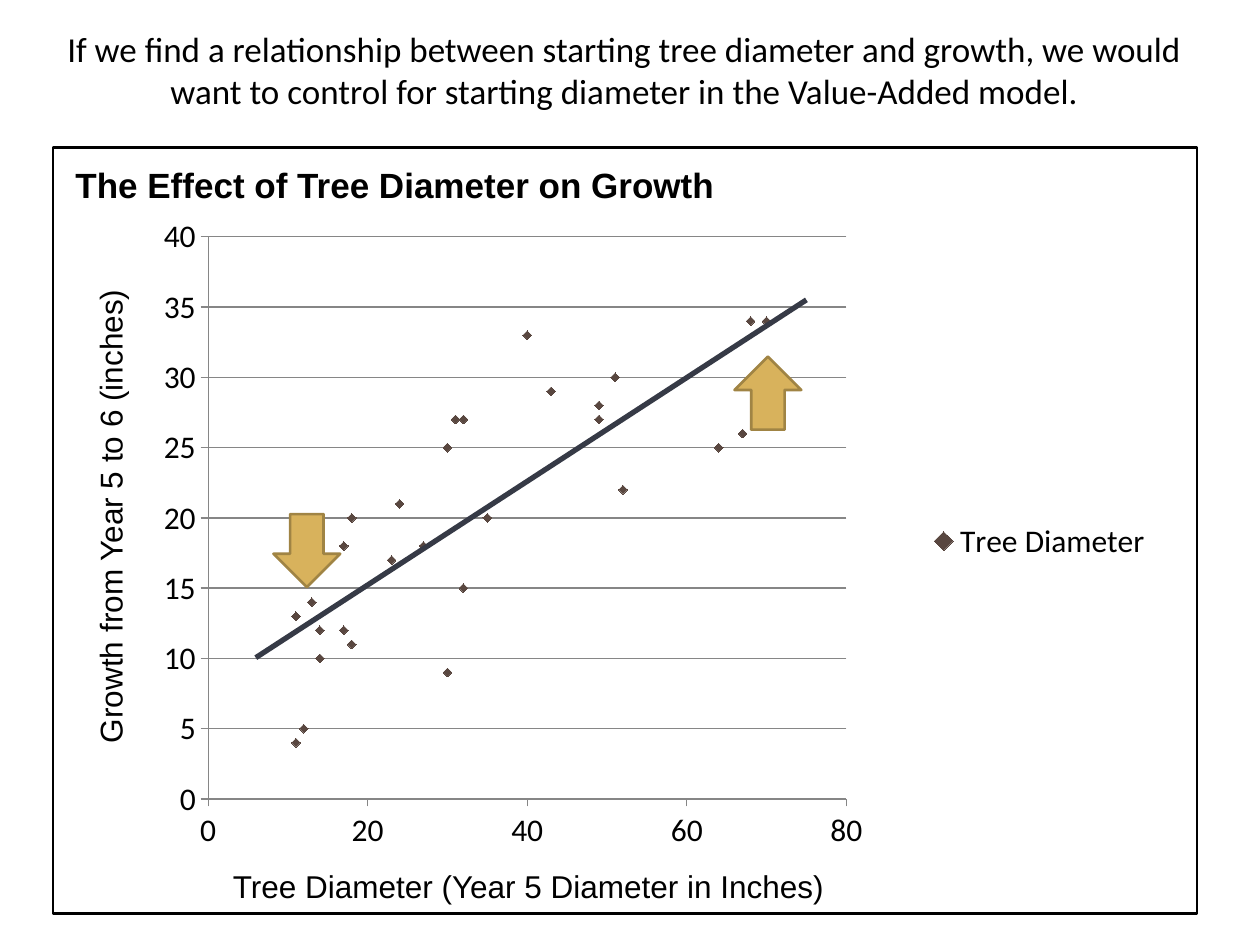
from lxml.etree import SubElement as Sub
from pptx import Presentation
from pptx.chart.data import XyChartData
from pptx.dml.color import RGBColor
from pptx.enum.chart import XL_CHART_TYPE as Kind, XL_LEGEND_POSITION as Side
from pptx.enum.chart import XL_MARKER_STYLE as Mark, XL_TICK_MARK as Tick
from pptx.enum.shapes import MSO_CONNECTOR as Link, MSO_SHAPE as Form
from pptx.enum.text import MSO_AUTO_SIZE as Fit, PP_ALIGN as Align
from pptx.oxml.ns import qn
from pptx.util import Inches, Pt

HUES = {"ink": "000000", "grid": "868686", "dot": "594740",
        "gold": "D8B25C", "edge": "A08444", "trend": "363A46"}

TEXTS = [
    ("If we find a relationship between starting tree diameter and growth, "
     "we would want to control for starting diameter in the Value-Added model.",
     (0.33, 0.17, 9.25, 0.77), 0, 20, "Calibri", False, Align.CENTER, True),
    ("The Effect of Tree Diameter on Growth",
     (0.5, 1.25, 8.92, 0.44), 0, 20, "Arial", True, Align.LEFT, True),
    ("Growth from Year 5 to 6 (inches)",
     (-1.04, 3.88, 3.83, 0.4), 270, 18, "Arial", False, Align.LEFT, False),
    ("Tree Diameter (Year 5 Diameter in Inches)",
     (1.75, 6.83, 4.94, 0.4), 0, 18, "Arial", False, Align.LEFT, False),
]
TREES = [
    (11, 4), (11, 13), (12, 5), (13, 14), (14, 12), (14, 10), (17, 18), (17, 12),
    (18, 11), (18, 20), (23, 17), (24, 21), (27, 18), (30, 9), (30, 25), (31, 27),
    (32, 15), (32, 27), (35, 20), (40, 33), (43, 29), (49, 28), (49, 27), (51, 30),
    (52, 22), (64, 25), (67, 26), (68, 34), (70, 34),
]
FRAME = (0.42, 1.17, 9.08, 6.08)
CHART = (1.08, 1.67, 8.17, 5.25)
PLOT = {"x": 0.07, "y": 0.04, "w": 0.62, "h": 0.85}
ARROWS = [(5.83, 2.83, 0), (2.17, 4.08, 180)]
TREND = (2.03, 5.22, 6.4, 2.38)


def hue(name):
    return RGBColor.from_string(HUES[name])


def units(box):
    return [Inches(n) for n in box]


def stroke(line, name, size):
    line.color.rgb = hue(name)
    line.width = Pt(size)


def style(font, size, face, bold=False):
    font.size, font.name, font.bold = Pt(size), face, bold
    font.color.rgb = hue("ink")


def add_form(shapes, form, box, fill, edge):
    item = shapes.add_shape(form, *units(box))
    item.shadow.inherit = False
    if fill:
        item.fill.solid()
        item.fill.fore_color.rgb = hue(fill)
    else:
        item.fill.background()
    stroke(item.line, edge, 1.5)
    return item


def add_text(shapes, words, box, turn, size, face, bold, align, wrap):
    item = shapes.add_textbox(*units(box))
    item.rotation = turn
    frame = item.text_frame
    frame.text = words
    frame.word_wrap = wrap
    frame.auto_size = Fit.SHAPE_TO_FIT_TEXT
    para = frame.paragraphs[0]
    para.alignment = align
    style(para.runs[0].font, size, face, bold)


def set_axis(axis, top, step, grid):
    axis.minimum_scale, axis.maximum_scale, axis.major_unit = 0, top, step
    axis.has_major_gridlines = grid
    axis.major_tick_mark, axis.minor_tick_mark = Tick.OUTSIDE, Tick.NONE
    stroke(axis.format.line, "grid", 0.75)
    if grid:
        stroke(axis.major_gridlines.format.line, "grid", 0.75)


def set_plot(chart):
    area = chart.plots[0]._element.getparent()
    for old in area.findall(qn("c:layout")):
        area.remove(old)
    layout = area.makeelement(qn("c:layout"))
    area.insert(0, layout)
    manual = Sub(layout, qn("c:manualLayout"))
    rules = [("layoutTarget", "inner"), ("xMode", "edge"), ("yMode", "edge")]
    for tag, val in rules + list(PLOT.items()):
        Sub(manual, qn(f"c:{tag}")).set("val", str(val))


def add_trees(shapes):
    data = XyChartData()
    series = data.add_series("Tree Diameter")
    for wide, growth in TREES:
        series.add_data_point(wide, growth)
    chart = shapes.add_chart(Kind.XY_SCATTER, *units(CHART), data).chart
    style(chart.font, 18, "Calibri")
    chart.has_title = False
    chart.has_legend = True
    chart.legend.position = Side.RIGHT
    chart.legend.include_in_layout = False
    plot = chart.plots[0]
    plot.vary_by_categories = False
    dots = plot.series[0]
    dots.smooth = False
    dots.format.line.fill.background()
    dots.marker.style, dots.marker.size = Mark.DIAMOND, 5
    dots.marker.format.fill.solid()
    dots.marker.format.fill.fore_color.rgb = hue("dot")
    dots.marker.format.line.color.rgb = hue("dot")
    set_axis(chart.category_axis, 80, 20, False)
    set_axis(chart.value_axis, 40, 5, True)
    set_plot(chart)


def main():
    deck = Presentation()
    deck.slide_width, deck.slide_height = Inches(10), Inches(7.5)
    shapes = deck.slides.add_slide(deck.slide_layouts[6]).shapes
    add_form(shapes, Form.RECTANGLE, FRAME, None, "ink")
    for text in TEXTS:
        add_text(shapes, *text)
    add_trees(shapes)
    for left, top, turn in ARROWS:
        arrow = add_form(shapes, Form.UP_ARROW, (left, top, 0.53, 0.58), "gold", "edge")
        arrow.rotation = turn
    trend = shapes.add_connector(Link.STRAIGHT, *units(TREND))
    stroke(trend.line, "trend", 3)
    Sub(trend._element.spPr, qn("a:effectLst"))
    deck.save("out.pptx")


if __name__ == "__main__":
    main()
